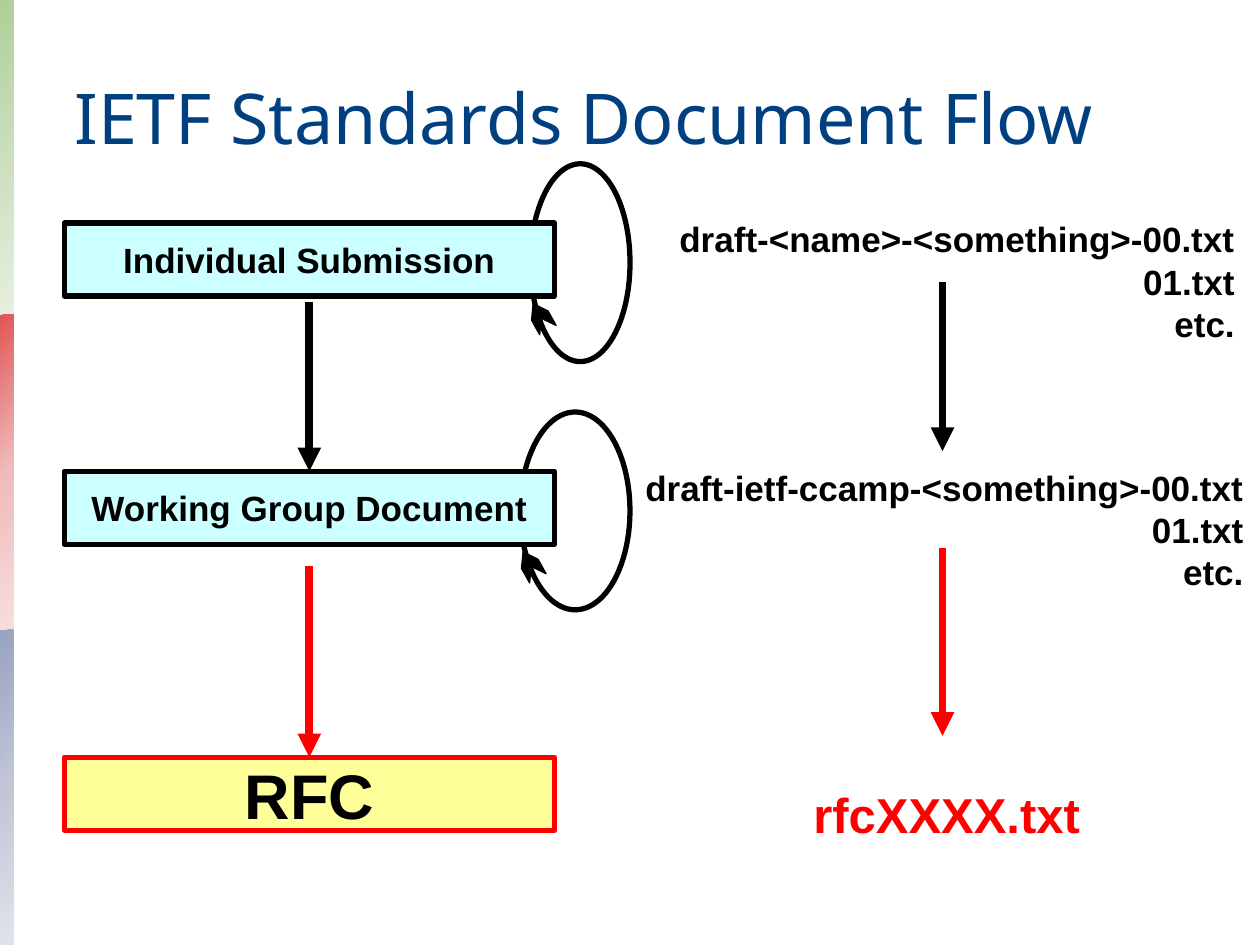
import copy

import pptx
import pptx.dml.color
import pptx.enum.shapes
import pptx.enum.text
import pptx.oxml.ns
import pptx.util
from pptx.util import Inches

RGBColor = pptx.dml.color.RGBColor
SHAPE = pptx.enum.shapes.MSO_SHAPE
ALIGN = pptx.enum.text.PP_ALIGN
ANCHOR = pptx.enum.text.MSO_ANCHOR
qn = pptx.oxml.ns.qn

BLACK = RGBColor(0x00, 0x00, 0x00)
RED = RGBColor(0xFF, 0x00, 0x00)
NAVY = RGBColor(0x00, 0x40, 0x80)
CYAN = RGBColor(0xCC, 0xFF, 0xFF)
YELLOW = RGBColor(0xFF, 0xFF, 0x99)
BAND_COLORS = [
    (RGBColor(0xAD, 0xCF, 0x95), RGBColor(0xCC, 0xDF, 0xBF), RGBColor(0xE6, 0xEF, 0xE0)),
    (RGBColor(0xE0, 0x55, 0x55), RGBColor(0xF0, 0xBB, 0xBB), RGBColor(0xF7, 0xDE, 0xDE)),
    (RGBColor(0x98, 0xA1, 0xC0), RGBColor(0xC1, 0xC6, 0xD7), RGBColor(0xE1, 0xE3, 0xEB)),
]


def add_shape(shapes, kind, x, y, w, h, fill=None, line=None, width=3):
    s = shapes.add_shape(kind, Inches(x), Inches(y), Inches(w), Inches(h))
    s.shadow.inherit = False
    if fill is None:
        s.fill.background()
    else:
        s.fill.solid()
        s.fill.fore_color.rgb = fill
    if line is None:
        s.line.fill.background()
    else:
        s.line.color.rgb = line
        s.line.width = pptx.util.Pt(width)
    return s


def write(s, text, size, color, align, font="Arial", bold=True):
    tf = s.text_frame
    tf.text = text
    tf.margin_left = tf.margin_right = Inches(0.09)
    tf.margin_top = tf.margin_bottom = Inches(0.04)
    for p in tf.paragraphs:
        p.alignment = align
        for r in p.runs:
            r.font.name = font
            r.font.size = pptx.util.Pt(size)
            r.font.bold = bold
            r.font.color.rgb = color


def add_side_bands(shapes, x, y, w, h):
    band_h = h / len(BAND_COLORS)
    for i, colors in enumerate(BAND_COLORS):
        s = add_shape(shapes, SHAPE.RECTANGLE, x, y + i * band_h, w, band_h)
        s.fill.gradient()
        s.fill.gradient_angle = 315
        # Insert a middle stop between the two default ones
        stops = s.element.spPr.find(qn("a:gradFill")).find(qn("a:gsLst"))
        stops.insert(1, copy.deepcopy(stops[0]))
        for stop, color, position in zip(s.fill.gradient_stops, colors, (0, 0.5, 1)):
            stop.color.rgb = color
            stop.position = position


def set_title(s, x, y, w, h):
    s.left, s.top, s.width, s.height = map(Inches, (x, y, w, h))
    write(s, "IETF Standards Document Flow", 40, NAVY, ALIGN.LEFT, "Noto Sans", False)
    s.text_frame.vertical_anchor = ANCHOR.MIDDLE


def add_revision_loop(shapes, x, y, w, h):
    """Ellipse that runs behind a stage box, with an arrowhead at its lower left."""
    group = shapes.add_group_shape()
    add_shape(group.shapes, SHAPE.OVAL, x, y, w, h, line=BLACK)
    head = add_shape(group.shapes, SHAPE.CHEVRON, x - 0.04, y + 1.14, 0.24, 0.15,
                     BLACK, BLACK, 0.75)
    head.adjustments[0] = 0.72
    head.rotation = 240.8


def add_stage(shapes, x, y, w, h, text, size, fill, line):
    s = add_shape(shapes, SHAPE.RECTANGLE, x, y, w, h, fill, line)
    write(s, text, size, BLACK, ALIGN.CENTER)
    s.text_frame.vertical_anchor = ANCHOR.MIDDLE
    return s


def add_arrow(shapes, x, y1, y2, color, target=None):
    s = shapes.add_connector(pptx.enum.shapes.MSO_CONNECTOR.STRAIGHT,
                             Inches(x), Inches(y1), Inches(x), Inches(y2))
    if target is not None:
        s.end_connect(target, 0)
    s.line.color.rgb = color
    s.line.width = pptx.util.Pt(4.5)
    s.line._get_or_add_ln().append(
        pptx.oxml.parse_xml('<a:tailEnd %s type="triangle"/>' % pptx.oxml.ns.nsdecls("a")))
    s.element.spPr.append(
        pptx.oxml.parse_xml("<a:effectLst %s/>" % pptx.oxml.ns.nsdecls("a")))


def add_file_names(shapes, x, y, w, h, lines, size, color):
    s = shapes.add_textbox(Inches(x), Inches(y), Inches(w), Inches(h))
    write(s, "\n".join(lines), size, color, ALIGN.RIGHT)
    s.text_frame.word_wrap = False
    s.text_frame.auto_size = pptx.enum.text.MSO_AUTO_SIZE.SHAPE_TO_FIT_TEXT


def add_stage_column(shapes, x, y, w):
    box_h, mid = 0.58, x + w / 2
    working_y, rfc_y = y + 1.97, y + 4.24

    # Loops go behind the boxes and share their right edge
    for loop_y, loop_w in ((working_y, 0.87), (y, 0.79)):
        add_revision_loop(shapes, x + 4.49 - loop_w, loop_y - 0.47, loop_w, 1.57)

    add_stage(shapes, x, y, w, box_h, "Individual Submission", 20, CYAN, BLACK)
    working = add_stage(shapes, x, working_y, w, box_h,
                        "Working Group Document", 20, CYAN, BLACK)
    rfc = add_stage(shapes, x, rfc_y, w, box_h, "RFC", 36, YELLOW, RED)

    add_arrow(shapes, mid, y + 0.63, working_y, BLACK, working)
    add_arrow(shapes, mid, working_y + 0.75, rfc_y, RED, rfc)


def add_file_column(shapes, x, y):
    revisions = ["01.txt", "etc."]
    add_file_names(shapes, x + 0.27, y, 4.62, 1.1,
                   ["draft-<name>-<something>-00.txt"] + revisions, 20, BLACK)
    add_file_names(shapes, x, y + 1.97, 4.96, 1.1,
                   ["draft-ietf-ccamp-<something>-00.txt"] + revisions, 20, BLACK)
    add_file_names(shapes, x + 1.34, y + 4.5, 2.32, 0.56, ["rfcXXXX.txt"], 28, RED)
    add_arrow(shapes, x + 2.48, y + 0.55, y + 1.89, BLACK)
    add_arrow(shapes, x + 2.48, y + 2.66, y + 4.15, RED)


def main():
    prs = pptx.Presentation()
    prs.slide_width, prs.slide_height = Inches(10), Inches(7.5)
    slide = prs.slides.add_slide(prs.slide_layouts[5])
    add_side_bands(slide.shapes, -0.01, 0, 0.12, 7.5)
    set_title(slide.shapes.title, 0.5, 0.3, 9, 1.25)
    add_stage_column(slide.shapes, 0.51, 1.77, 3.89)
    add_file_column(slide.shapes, 5, 1.69)
    prs.save("out.pptx")


if __name__ == "__main__":
    main()
